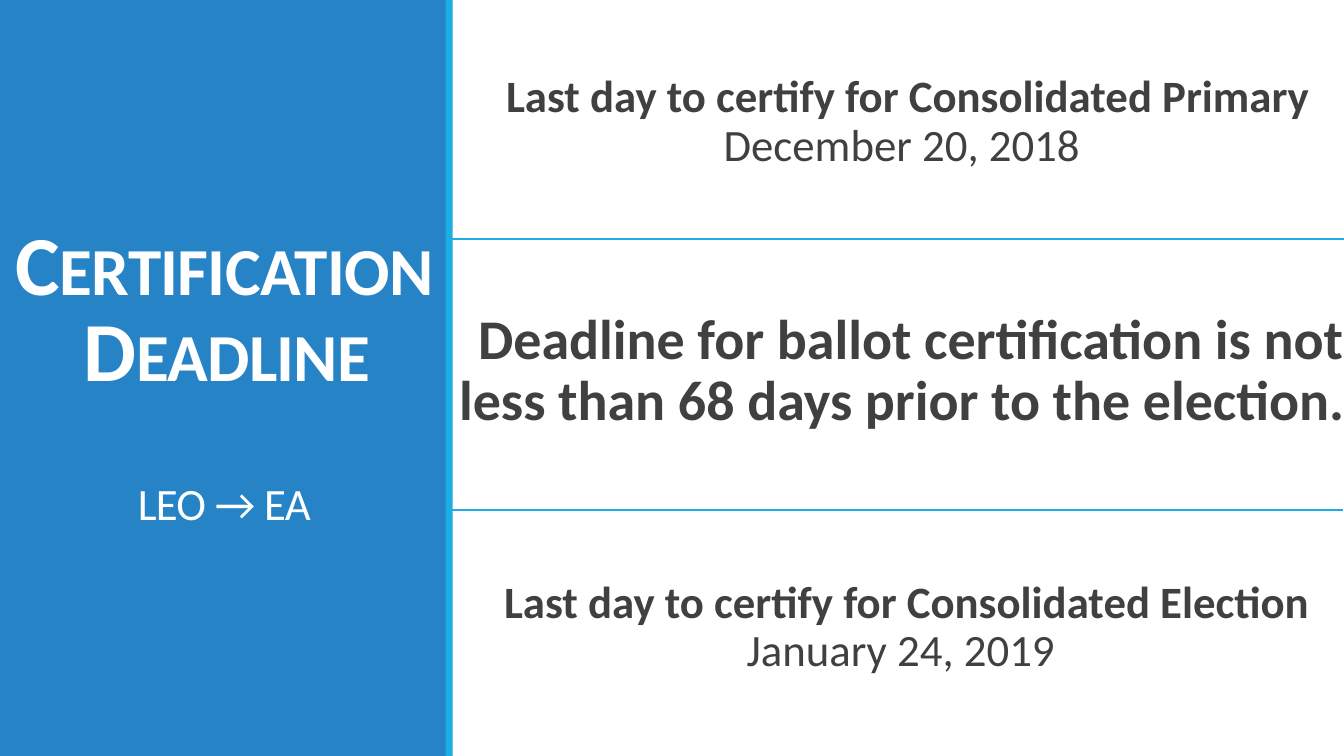
import copy

import pptx
import pptx.dml.color
import pptx.enum.shapes
import pptx.enum.text
import pptx.oxml
import pptx.oxml.ns
import pptx.util
from pptx.util import Inches

COLORS = {"panel": "2683C6", "accent": "1CADE4", "text": "404040", "title": "FFFFFF"}


class Deck:
    """Holds the presentation style and the current slide."""

    font = "Calibri"

    def __init__(self):
        self.prs = pptx.Presentation()
        self.prs.slide_width = Inches(13.33)
        self.prs.slide_height = Inches(7.5)
        self.s = self.prs.slides.add_slide(self.prs.slide_layouts[5])

    def color(self, name):
        return pptx.dml.color.RGBColor.from_string(COLORS[name])

    def element(self, parent, tag, **attrs):
        el = pptx.oxml.parse_xml(f"<{tag} {pptx.oxml.ns.nsdecls('a')}/>")
        for key, value in attrs.items():
            el.set(key, value)
        parent.append(el)
        return el

    def panel(self, x, w, color):
        box = Inches(x), Inches(0), Inches(w), self.prs.slide_height
        sp = self.s.shapes.add_shape(pptx.enum.shapes.MSO_SHAPE.RECTANGLE, *box)
        sp.shadow.inherit = False
        sp.fill.solid()
        sp.fill.fore_color.rgb = self.color(color)
        sp.line.fill.background()

    def rule(self, x, y, w):
        sp = self.s.shapes.add_connector(
            pptx.enum.shapes.MSO_CONNECTOR.STRAIGHT,
            Inches(x), Inches(y), Inches(x + w), Inches(y))
        sp.line.color.rgb = self.color("accent")
        sp.line.width = pptx.util.Pt(1)
        self.element(sp._element.spPr, "a:effectLst")

    def set_lines(self, tf, lines, color, spacing):
        tf.word_wrap = True
        tf.auto_size = pptx.enum.text.MSO_AUTO_SIZE.NONE
        tf.vertical_anchor = pptx.enum.text.MSO_ANCHOR.MIDDLE
        p = tf.paragraphs[0]
        p.alignment = pptx.enum.text.PP_ALIGN.CENTER
        p.line_spacing = spacing
        p.text = "\v".join(text for text, size, bold in lines)
        styles = [(size, bold) for text, size, bold in lines if text]
        for r, (size, bold) in zip(p.runs, styles):
            r.font.name = self.font
            r.font.size = pptx.util.Pt(size)
            r.font.bold = bold
            r.font.color.rgb = self.color(color)
        for br in p._p.findall(pptx.oxml.ns.qn("a:br")):
            br.append(copy.deepcopy(p.runs[0].font._element))
        return p

    def title(self, x, y, w, h, lines):
        sp = self.s.shapes.title
        sp.left, sp.top, sp.width, sp.height = map(Inches, (x, y, w, h))
        p = self.set_lines(sp.text_frame, lines, "title", 0.85)
        heading = p.runs[0].font._element
        heading.set("cap", "small")
        for r in p.runs:
            r.font._element.set("spc", "-50")

    def statement(self, x, y, w, h, lines):
        sp = self.s.shapes.add_textbox(*map(Inches, (x, y, w, h)))
        tf = sp.text_frame
        tf.margin_left = tf.margin_right = 0
        p = self.set_lines(tf, lines, "text", 0.9)
        p.space_before = pptx.util.Pt(12)
        p.space_after = pptx.util.Pt(2)
        pPr = p._p.get_or_add_pPr()
        pPr.set("marL", str(Inches(0.1)))
        pPr.set("indent", str(Inches(-0.1)))
        buClr = self.element(pPr, "a:buClr")
        self.element(buClr, "a:srgbClr", val=COLORS["accent"])
        self.element(pPr, "a:buChar", char=" ")


def main():
    deck = Deck()
    deck.panel(0, 4.43, "panel")
    deck.panel(4.42, 0.07, "accent")
    deck.title(0, 0.33, 4.45, 6.85, [
        ("Certification Deadline", 60, True), ("", 60, True), ("LEO → EA", 32, False)])
    deck.statement(4.45, 0.3, 8.89, 1.83, [
        ("Last day to certify for Consolidated Primary", 32, True),
        ("December 20, 2018", 32, False)])
    deck.rule(4.45, 2.37, 8.88)
    deck.rule(4.43, 5.06, 8.89)
    deck.statement(4.45, 2.74, 8.89, 1.9, [
        ("Deadline for ballot certification is not less than 68 days prior to the election.",
         40, True)])
    deck.statement(4.45, 5.28, 8.87, 1.9, [
        ("Last day to certify for Consolidated Election", 32, True),
        ("January 24, 2019", 32, False)])
    deck.s.shapes._spTree.append(deck.s.shapes.title._element)
    deck.prs.save("out.pptx")


if __name__ == "__main__":
    main()
